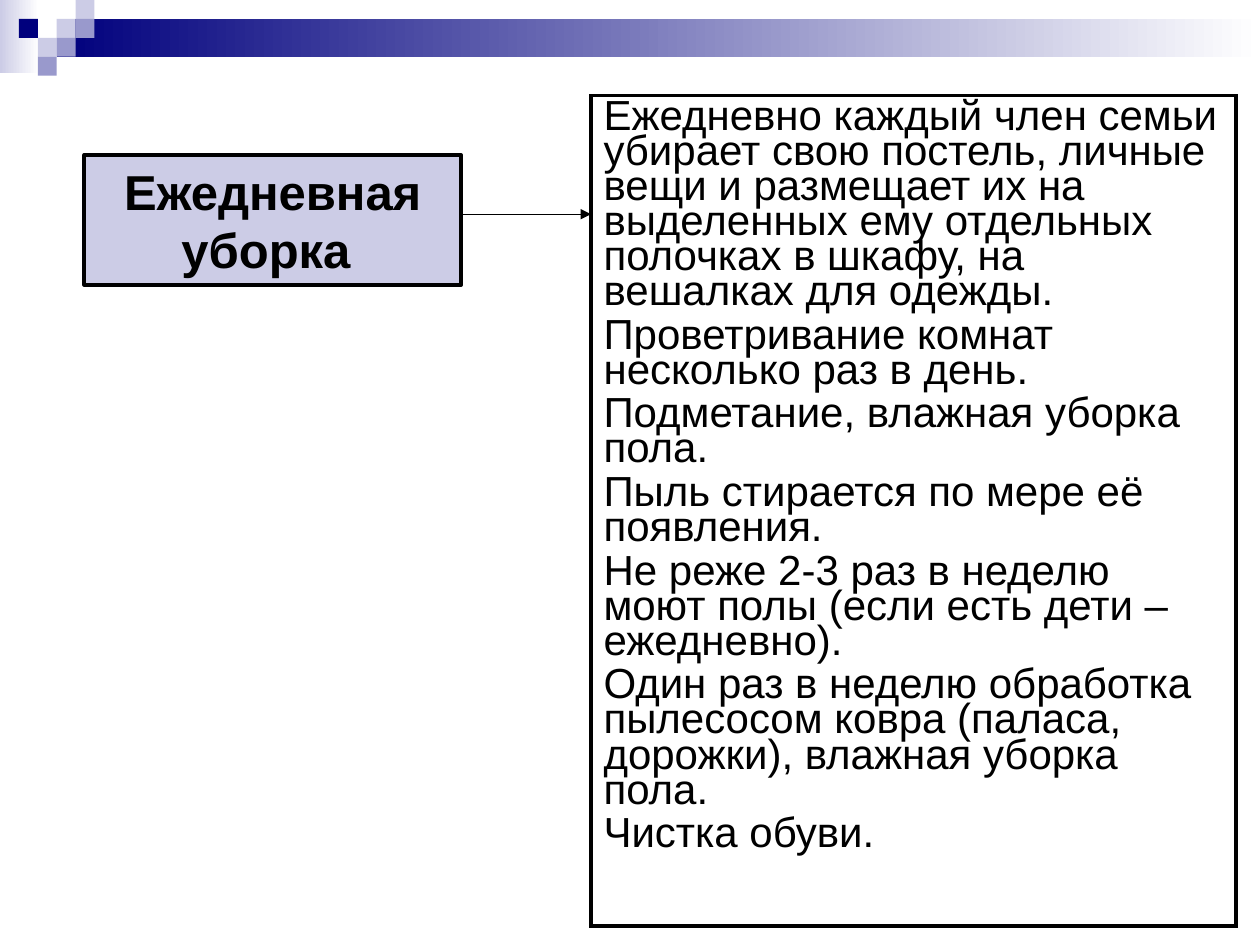
from dataclasses import dataclass

from lxml.etree import SubElement
from pptx import Presentation
from pptx.dml.color import RGBColor
from pptx.enum.shapes import MSO_CONNECTOR as Connector, MSO_SHAPE as Shape
from pptx.enum.text import MSO_ANCHOR as Anchor, PP_ALIGN as Align
from pptx.oxml.ns import qn
from pptx.util import Pt


@dataclass(frozen=True)
class Theme:
    font: str = "Arial"
    heading_size: float = 28
    body_size: float = 24
    border: float = 2.25
    arrow: float = 0.75
    black: str = "000000"
    white: str = "FFFFFF"
    navy: str = "00007D"
    violet: str = "9999CC"
    lavender: str = "CCCCE6"


THEME = Theme()
rgb = RGBColor.from_string

HEADING = ["Ежедневная", "уборка "]
TASKS = [
    "Ежедневно каждый член семьи убирает свою постель, личные вещи и размещает "
    "их на выделенных ему отдельных полочках в шкафу, на вешалках для одежды.",
    "Проветривание комнат несколько раз в день.",
    "Подметание, влажная уборка пола.",
    "Пыль стирается по мере её появления.",
    "Не реже 2-3 раз в неделю моют полы (если есть дети – ежедневно).",
    "Один раз в неделю обработка пылесосом ковра (паласа, дорожки), "
    "влажная уборка пола.",
    "Чистка обуви.",
]


def add_rectangle(slide, left, top, width, height):
    rectangle = slide.shapes.add_shape(
        Shape.RECTANGLE, Pt(left), Pt(top), Pt(width), Pt(height))
    rectangle.shadow.inherit = False
    rectangle.line.fill.background()
    return rectangle


def fill_solid(target, color):
    target.fill.solid()
    target.fill.fore_color.rgb = rgb(color)


def fill_fading_right(target, color):
    target.fill.gradient()
    target.fill.gradient_angle = 180
    for stop, stop_color in zip(target.fill.gradient_stops, (THEME.white, color)):
        stop.color.rgb = rgb(stop_color)


def write_paragraphs(frame, lines, size, bold=False):
    for index, line in enumerate(lines):
        paragraph = frame.paragraphs[0] if index == 0 else frame.add_paragraph()
        paragraph.text = line
        paragraph.font.name = THEME.font
        paragraph.font.size = Pt(size)
        paragraph.font.bold = bold
        paragraph.font.color.rgb = rgb(THEME.black)
    return frame.paragraphs


def add_header_band(slide, left, top, width):
    """Two fading bars and a checker of small squares on a common grid."""
    cell = 10.8
    side_bar = add_rectangle(slide, left, top, 22.3, 41.8)
    fill_fading_right(side_bar, THEME.lavender)
    long_bar = add_rectangle(
        slide, left + 3 * cell, top + cell, width - 3 * cell, 2 * cell)
    fill_fading_right(long_bar, THEME.navy)
    squares = [
        (3, 1, THEME.lavender), (4, 0, THEME.lavender), (4, 1, THEME.violet),
        (2, 2, THEME.lavender), (1, 1, THEME.navy), (3, 2, THEME.violet),
        (2, 3, THEME.violet),
    ]
    for column, row, color in squares:
        square = add_rectangle(
            slide, left + column * cell, top + row * cell, cell, cell)
        fill_solid(square, color)


def add_heading_box(slide, left, top, width, height):
    box = add_rectangle(slide, left, top, width, height)
    fill_solid(box, THEME.lavender)
    fill_solid(box.line, THEME.black)
    box.line.width = Pt(THEME.border)
    frame = box.text_frame
    frame.word_wrap = True
    frame.vertical_anchor = Anchor.MIDDLE
    for paragraph in write_paragraphs(frame, HEADING, THEME.heading_size, bold=True):
        paragraph.alignment = Align.CENTER


def add_cell_borders(cell):
    properties = cell._tc.get_or_add_tcPr()
    for index, side in enumerate(("a:lnL", "a:lnR", "a:lnT", "a:lnB")):
        border = SubElement(properties, qn(side), w=str(Pt(THEME.border)))
        fill = SubElement(border, qn("a:solidFill"))
        SubElement(fill, qn("a:srgbClr"), val=THEME.black)
        properties.insert(index, border)


def add_task_table(slide, left, top, width, height):
    table = slide.shapes.add_table(
        1, 1, Pt(left), Pt(top), Pt(width), Pt(height)).table
    table.first_row = False
    table.horz_banding = False
    cell = table.cell(0, 0)
    cell.fill.background()
    add_cell_borders(cell)
    paragraphs = write_paragraphs(cell.text_frame, TASKS, THEME.body_size)
    for index, paragraph in enumerate(paragraphs):
        paragraph.line_spacing = 0.75
        paragraph.space_before = Pt(4.8 if index else 0)


def add_arrow(slide, start, end, y):
    arrow = slide.shapes.add_connector(
        Connector.STRAIGHT, Pt(start), Pt(y), Pt(end), Pt(y))
    fill_solid(arrow.line, THEME.black)
    arrow.line.width = Pt(THEME.arrow)
    SubElement(arrow.line._get_or_add_ln(), qn("a:tailEnd"), type="triangle")
    SubElement(arrow._element.spPr, qn("a:effectLst"))


def main():
    presentation = Presentation()
    presentation.slide_width, presentation.slide_height = Pt(720), Pt(540)
    slide = presentation.slides.add_slide(presentation.slide_layouts[6])
    add_header_band(slide, 0, 0, 720)
    add_heading_box(slide, 48.2, 88.6, 215.3, 74.2)
    add_task_table(slide, 337.7, 54.7, 368.6, 474.5)
    add_arrow(slide, 263.5, 337.7, 122.4)
    presentation.save("out.pptx")


if __name__ == "__main__":
    main()
